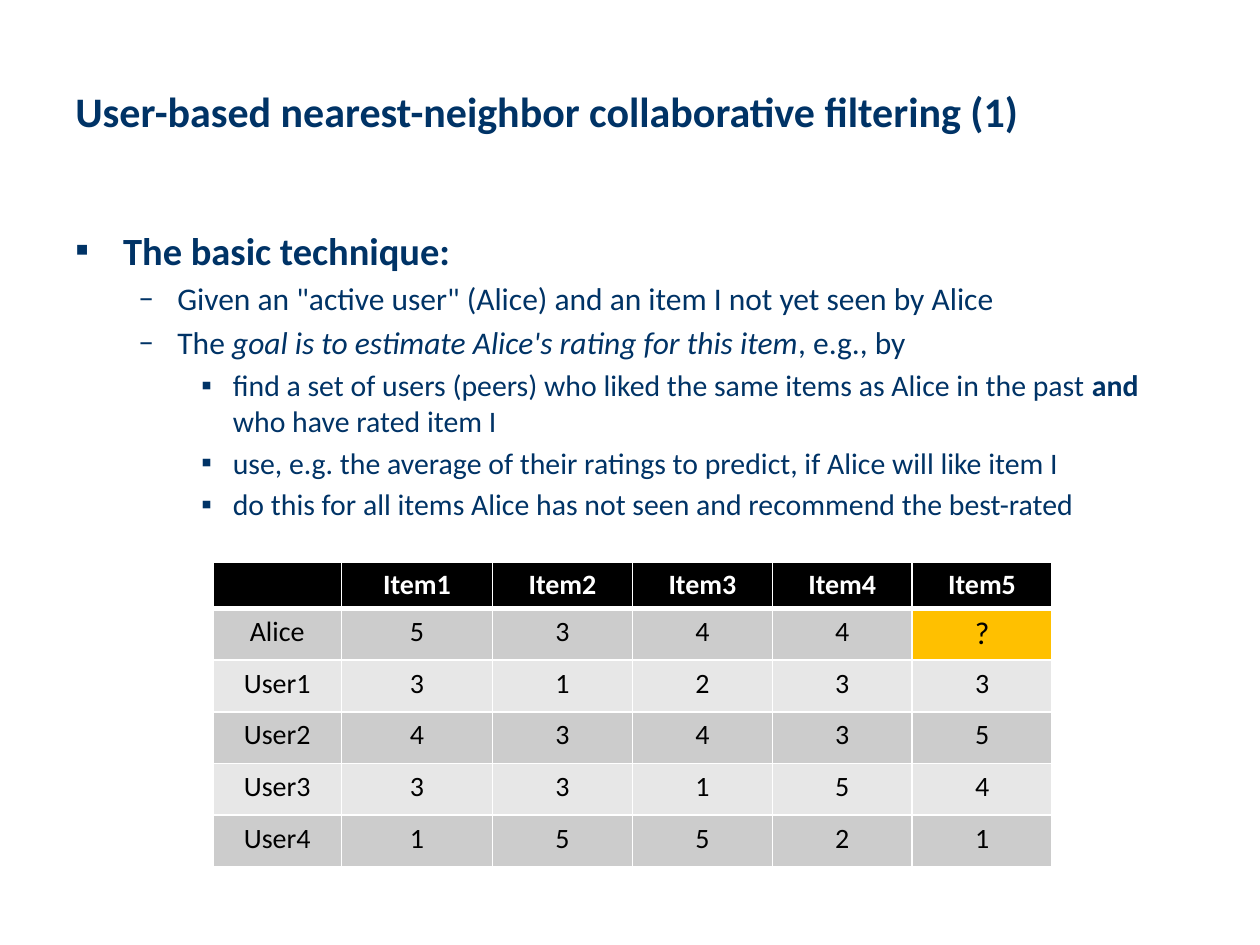
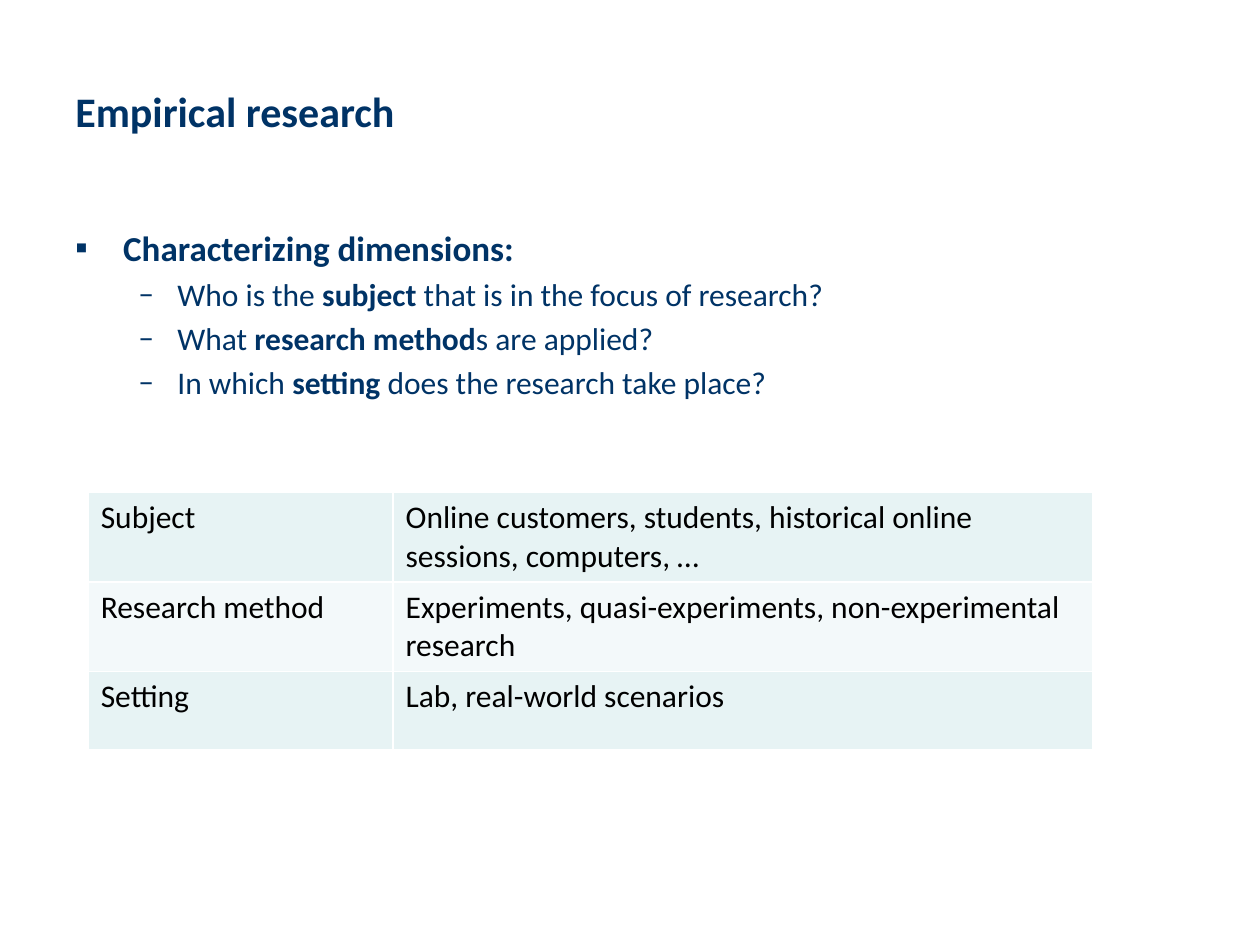
from lxml import etree
from pptx import Presentation
from pptx import util as u
from pptx.dml.color import RGBColor
from pptx.enum import text
from pptx.oxml import ns

NAVY = RGBColor(0x00, 0x33, 0x66)
BLACK = RGBColor(0x00, 0x00, 0x00)
WHITE = RGBColor(0xFF, 0xFF, 0xFF)
AMBER = RGBColor(0xFF, 0xC0, 0x00)
GREYS = (RGBColor(0xCC, 0xCC, 0xCC), RGBColor(0xE7, 0xE7, 0xE7))
TEALS = (RGBColor(0xE7, 0xF3, 0xF4), RGBColor(0xF3, 0xF9, 0xFA))
FONT = "Calibri"
LEVELS = (
    {"left": 0.38, "hang": 0.38, "bullet": "▪"},
    {"left": 0.81, "hang": 0.31, "bullet": "–"},
    {"left": 1.25, "hang": 0.25, "bullet": "▪"},
)

TECHNIQUE = [
    (0, 22, [("The basic technique:", "b")]),
    (1, 18, [('Given an "active user" (Alice) and an item I not yet seen by Alice', "")]),
    (1, 18, [("The ", ""), ("goal is to estimate Alice's rating for this item", "i"),
             (", e.g., by", "")]),
    (2, 17, [("find a set of users (peers) who liked the same items as Alice in the past ", ""),
             ("and ", "b"), ("who have rated item I", "")]),
    (2, 17, [("use, e.g. the average of their ratings to predict, if Alice will like item I", "")]),
    (2, 17, [("do this for all items Alice has not seen and recommend the best-rated", "")]),
]
RATINGS = [
    ("", "Item1", "Item2", "Item3", "Item4", "Item5"),
    ("Alice", "5", "3", "4", "4", "?"),
    ("User1", "3", "1", "2", "3", "3"),
    ("User2", "4", "3", "4", "3", "5"),
    ("User3", "3", "3", "1", "5", "4"),
    ("User4", "1", "5", "5", "2", "1"),
]
DIMENSIONS = [
    (0, 20, [("Characterizing dimensions:", "b")]),
    (1, 18, [("Who is the ", ""), ("subject", "b"),
             (" that is in the focus of research?", "")]),
    (1, 18, [("What ", ""), ("research method", "b"), ("s are applied?", "")]),
    (1, 18, [("In which ", ""), ("setting", "b"), (" does the research take place?", "")]),
]
EXAMPLES = [
    ("Subject", "Online customers, students, historical online sessions, computers, …"),
    ("Research method", "Experiments, quasi-experiments, non-experimental research"),
    ("Setting", "Lab, real-world scenarios"),
]


def add_xml(parent, tag, **attributes):
    return etree.SubElement(parent, ns.qn(tag), attributes)


def write_text(para, words, size=18, color=NAVY, bold=False, italic=False):
    span = para.add_run()
    span.text = words
    span.font.name = FONT
    span.font.size = u.Pt(size)
    span.font.color.rgb = color
    span.font.bold = bold
    span.font.italic = italic


def add_box(page, top, height):
    box = page.shapes.add_textbox(u.Inches(0.5), u.Inches(top), u.Inches(9), u.Inches(height))
    box.text_frame.word_wrap = True
    return box.text_frame


def add_page(deck, title):
    page = deck.slides.add_slide(deck.slide_layouts[6])
    frame = add_box(page, 0.25, 1.25)
    frame.vertical_anchor = text.MSO_ANCHOR.MIDDLE
    write_text(frame.paragraphs[0], title, size=24, bold=True)
    return page


def format_level(para, level):
    style = LEVELS[level]
    para.level = level
    props = para._p.get_or_add_pPr()
    props.set("marL", str(u.Inches(style["left"])))
    props.set("indent", str(-u.Inches(style["hang"])))
    if level == 0:
        para.space_before = u.Pt(12)
    else:
        add_xml(add_xml(props, "a:spcBef"), "a:spcPct", val="20000")
    add_xml(props, "a:buFont", typeface=FONT)
    add_xml(props, "a:buChar", char=style["bullet"])


def add_outline(page, items):
    frame = add_box(page, 1.75, 4.95)
    for index, (level, size, spans) in enumerate(items):
        para = frame.add_paragraph() if index else frame.paragraphs[0]
        format_level(para, level)
        for words, style in spans:
            write_text(para, words, size=size, bold=style == "b", italic=style == "i")


def set_borders(cell, top=1, bottom=1):
    props = cell._tc.get_or_add_tcPr()
    for side, width in (("L", 1), ("R", 1), ("T", top), ("B", bottom)):
        line = add_xml(props, f"a:ln{side}", w=str(u.Pt(width)))
        add_xml(add_xml(line, "a:solidFill"), "a:srgbClr", val=str(WHITE))


def fill_cell(cell, words, fill, align, **style):
    cell.fill.solid()
    cell.fill.fore_color.rgb = fill
    para = cell.text_frame.paragraphs[0]
    para.alignment = align
    if words:
        write_text(para, words, **style)
    else:
        add_xml(para._p, "a:endParaRPr", sz=str(style["size"] * 100))


def add_grid(page, rows, left, top, widths, heights, bands, size,
             align=text.PP_ALIGN.LEFT, header=False):
    frame = page.shapes.add_table(len(rows), len(widths), u.Inches(left), u.Inches(top),
                                  u.Inches(sum(widths)), u.Inches(sum(heights)))
    table = frame.table
    for column, width in zip(table.columns, widths):
        column.width = u.Inches(width)
    for r, (row, height) in enumerate(zip(rows, heights)):
        table.rows[r].height = u.Inches(height)
        heading = header and r == 0
        band = BLACK if heading else bands[(r - header) % 2]
        for c, words in enumerate(row):
            cell = table.cell(r, c)
            set_borders(cell, top=3 if header and r == 1 else 1, bottom=3 if heading else 1)
            fill_cell(cell, words, band, align, size=size,
                      color=WHITE if heading else BLACK, bold=heading)
    return table


def main():
    deck = Presentation()
    deck.slide_width, deck.slide_height = u.Inches(10), u.Inches(7.5)

    page = add_page(deck, "User-based nearest-neighbor collaborative filtering (1)")
    add_outline(page, TECHNIQUE)
    ratings = add_grid(page, RATINGS, 1.69, 4.46, [1.02, 1.2] + [1.11] * 4,
                       [0.37] + [0.41] * 5, GREYS, 16, text.PP_ALIGN.CENTER, header=True)
    unknown = ratings.cell(1, 5)
    unknown.fill.fore_color.rgb = AMBER
    unknown.text_frame.paragraphs[0].runs[0].font.size = u.Pt(18)

    page = add_page(deck, "Empirical research")
    add_outline(page, DIMENSIONS)
    add_grid(page, EXAMPLES, 0.7, 3.91, [2.42, 5.55], [0.71, 0.71, 0.62], TEALS, 18)

    deck.save("out.pptx")


if __name__ == "__main__":
    main()
